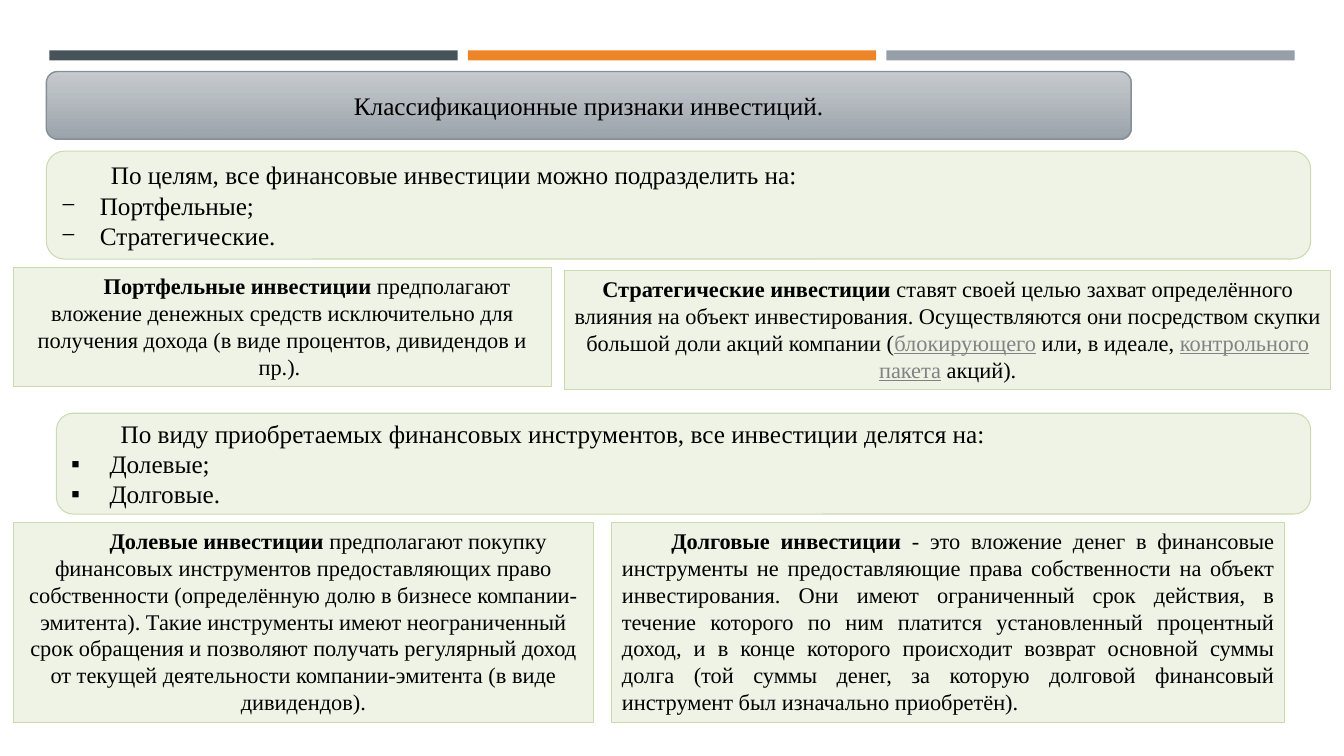
import pptx
import pptx.util
import pptx.dml.color
import pptx.enum.shapes
import pptx.enum.text
import pptx.oxml.ns
import lxml.etree
from dataclasses import dataclass

Inches = pptx.util.Inches
Pt = pptx.util.Pt
Color = pptx.dml.color.RGBColor.from_string
Form = pptx.enum.shapes.MSO_SHAPE
Align = pptx.enum.text.PP_ALIGN
Anchor = pptx.enum.text.MSO_ANCHOR
qn = pptx.oxml.ns.qn


@dataclass
class Theme:
    font: str = "Times New Roman"
    ink: str = "000000"
    link: str = "828282"
    panel: str = "EEF3E5"
    panel_line: str = "CBDBB0"
    title_top: str = "C0C5C9"
    title_bottom: str = "9BA3AB"
    title_line: str = "858F99"
    bars: tuple = ("465359", "ED8428", "969FA7")
    heading_size: int = 18
    body_size: int = 16


theme = Theme()


def add_box(form, place, fill, line=None, width=0.75):
    box = page.shapes.add_shape(form, *(Inches(value) for value in place))
    box.shadow.inherit = False
    box.fill.solid()
    box.fill.fore_color.rgb = Color(fill)
    if line:
        box.line.color.rgb = Color(line)
        box.line.width = Pt(width)
    else:
        box.line.fill.background()
    box.text_frame.word_wrap = True
    return box


def style(para, size, align, margin=0, indent=0, bullet=None):
    properties = para._p.get_or_add_pPr()
    properties.set("marL", str(Inches(margin)))
    properties.set("indent", str(Inches(indent)))
    if bullet:
        lxml.etree.SubElement(properties, qn("a:buFont"), typeface=theme.font)
        lxml.etree.SubElement(properties, qn("a:buChar"), char=bullet)
        tabs = lxml.etree.SubElement(properties, qn("a:tabLst"))
        lxml.etree.SubElement(tabs, qn("a:tab"), pos=str(Inches(0.5)), algn="l")
    para.alignment = align
    para.font.name = theme.font
    para.font.size = Pt(size)
    para.font.color.rgb = Color(theme.ink)


deck = pptx.Presentation()
deck.slide_width = Inches(13.33)
deck.slide_height = Inches(7.5)
page = deck.slides.add_slide(deck.slide_layouts[6])

# Colour bars along the top
for index, color in enumerate(theme.bars):
    add_box(Form.RECTANGLE, (0.49 + 4.15 * index, 0.5, 4.05, 0.1), color)

# Title with a vertical gradient
title = add_box(Form.ROUNDED_RECTANGLE, (0.46, 0.71, 10.76, 0.67),
                theme.title_bottom, theme.title_line, 1)
title.fill.gradient()
title.fill.gradient_angle = 270
for stop, color in zip(title.fill.gradient_stops, (theme.title_top, theme.title_bottom)):
    stop.color.rgb = Color(color)
top_color = title._element.spPr.find(".//" + qn("a:srgbClr"))
lxml.etree.SubElement(top_color, qn("a:alpha"), val="90000")
para = title.text_frame.paragraphs[0]
para.text = "Классификационные признаки инвестиций."
style(para, theme.heading_size, Align.CENTER)

# Classification panels: a lead line and its kinds
panels = [
    ((0.46, 1.5, 12.54, 1.07), "−",
     "По целям, все финансовые инвестиции можно подразделить на:",
     ("Портфельные;", "Стратегические.")),
    ((0.56, 4.1, 12.44, 1), "▪",
     "По виду приобретаемых финансовых инструментов, все инвестиции делятся на:",
     ("Долевые;", "Долговые.")),
]
for place, bullet, lead, kinds in panels:
    frame = add_box(Form.ROUNDED_RECTANGLE, place, theme.panel, theme.panel_line).text_frame
    frame.paragraphs[0].text = lead
    style(frame.paragraphs[0], theme.heading_size, Align.JUSTIFY, indent=0.49)
    for kind in kinds:
        para = frame.add_paragraph()
        para.text = kind
        style(para, theme.heading_size, Align.JUSTIFY, 0.38, -0.38, bullet)

# Definition cards: spans are (text, role)
cards = [
    ((0.13, 2.65, 5.34, 1.18), Align.CENTER, 0.49, [
        ("Портфельные инвестиции", "term"),
        (" предполагают вложение денежных средств исключительно для получения "
         "дохода (в виде процентов, дивидендов и пр.). ", "plain")]),
    ((5.6, 2.68, 7.6, 1.18), Align.CENTER, 0, [
        ("Стратегические инвестиции", "term"),
        (" ставят своей целью захват определённого влияния на объект инвестирования. "
         "Осуществляются они посредством скупки большой доли акций компании (", "plain"),
        ("блокирующего", "link"),
        (" или, в идеале, ", "plain"),
        ("контрольного пакета", "link"),
        (" акций).", "plain")]),
    ((0.13, 5.18, 5.76, 1.99), Align.CENTER, 0.49, [
        ("Долевые инвестиции", "term"),
        (" предполагают покупку финансовых инструментов предоставляющих право "
         "собственности (определённую долю в бизнесе компании-эмитента). Такие "
         "инструменты имеют неограниченный срок обращения и позволяют получать "
         "регулярный доход от текущей деятельности компании-эмитента "
         "(в виде дивидендов).", "plain")]),
    ((6.07, 5.18, 6.67, 1.99), Align.JUSTIFY, 0.49, [
        ("Долговые инвестиции", "term"),
        (" - это вложение денег в финансовые инструменты не предоставляющие права "
         "собственности на объект инвестирования. Они имеют ограниченный срок "
         "действия, в течение которого по ним платится установленный процентный "
         "доход, и в конце которого происходит возврат основной суммы долга (той "
         "суммы денег, за которую долговой финансовый инструмент был изначально "
         "приобретён).", "plain")]),
]
for place, align, indent, spans in cards:
    frame = add_box(Form.RECTANGLE, place, theme.panel, theme.panel_line).text_frame
    frame.vertical_anchor = Anchor.TOP
    frame.auto_size = pptx.enum.text.MSO_AUTO_SIZE.SHAPE_TO_FIT_TEXT
    para = frame.paragraphs[0]
    style(para, theme.body_size, align, indent=indent)
    for text, role in spans:
        span = para.add_run()
        span.text = text
        if role == "term":
            span.font.bold = True
        elif role == "link":
            span.font.underline = True
            span.font.color.rgb = Color(theme.link)

deck.save("out.pptx")
